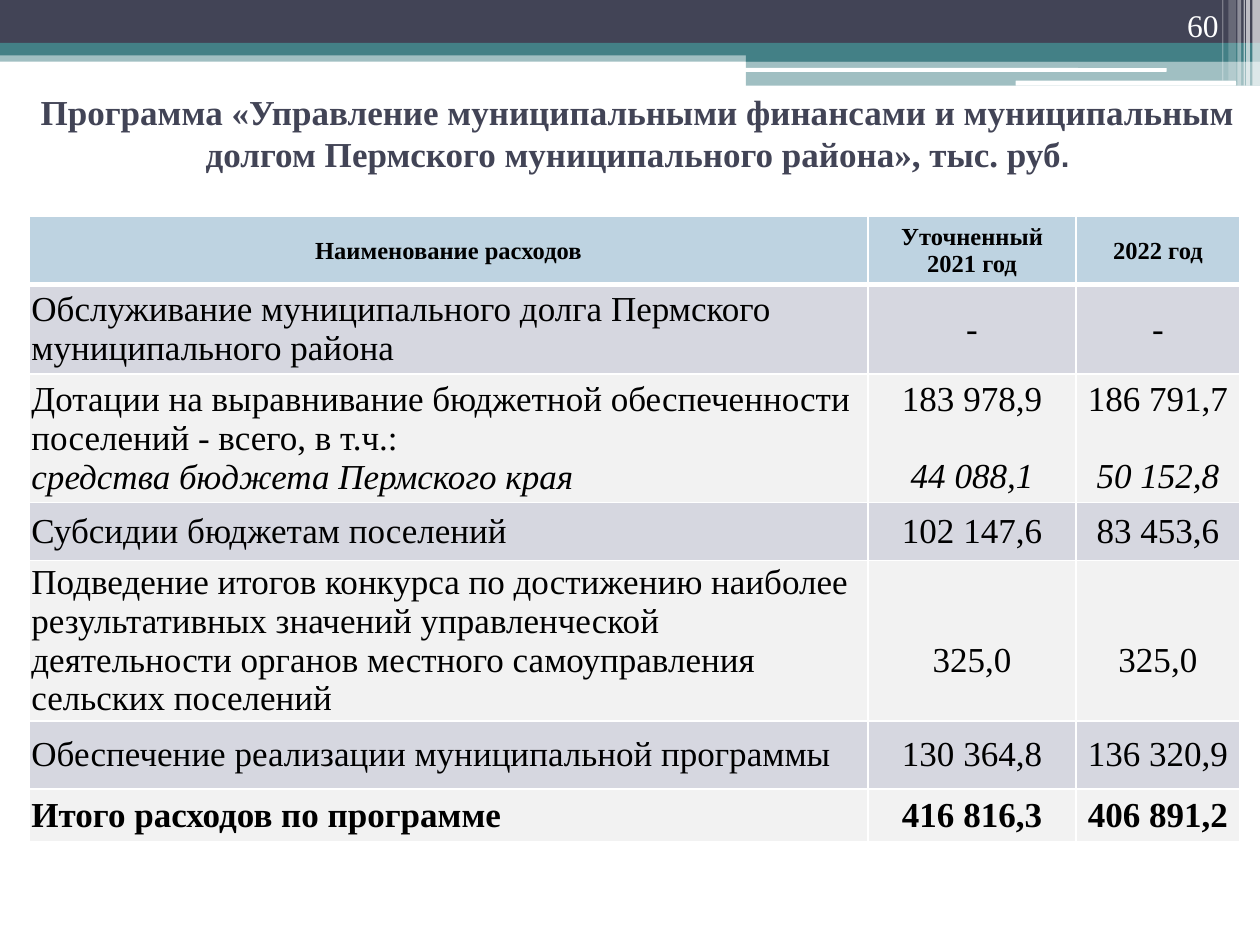
"""Build the municipal finance programme slide with its expenditure table."""
from dataclasses import dataclass

from pptx import Presentation
from pptx.dml.color import RGBColor
from pptx.enum.shapes import MSO_SHAPE
from pptx.enum.text import MSO_ANCHOR, PP_ALIGN
from pptx.oxml.ns import qn
from pptx.oxml.xmlchemy import OxmlElement
from pptx.util import Inches, Pt

RECTANGLE = MSO_SHAPE.RECTANGLE
ROUNDED = MSO_SHAPE.ROUNDED_RECTANGLE
MIDDLE, BOTTOM = MSO_ANCHOR.MIDDLE, MSO_ANCHOR.BOTTOM
LEFT, CENTER, RIGHT = PP_ALIGN.LEFT, PP_ALIGN.CENTER, PP_ALIGN.RIGHT


@dataclass(frozen=True)
class Theme:
    dark: str = "424456"
    teal: str = "438086"
    white: str = "FFFFFF"
    black: str = "000000"
    header: str = "BED3E1"
    bands: tuple[str, str] = ("D6D7E0", "F2F2F2")
    font: str = "Times New Roman"
    accent_font: str = "Cabin"
    body_size: int = 20
    header_size: int = 14
    number_size: int = 18


@dataclass(frozen=True)
class Bar:
    left: float
    top: float
    width: float
    height: float
    color: str
    opacity: int = 100
    shape_type: MSO_SHAPE = RECTANGLE


@dataclass(frozen=True)
class Expense:
    height: float
    name: str
    values: tuple[str, str]
    detail: str = ""
    detail_values: tuple[str, str] = ("", "")
    value_drop: float = 0
    bold: bool = False


THEME = Theme()
BARS = (
    Bar(0, 0.4, 10, 0.09, THEME.teal, 50),
    Bar(0, 0, 10, 0.34, THEME.dark),
    Bar(0, 0.34, 10, 0.1, THEME.teal),
    Bar(5.92, 0.39, 4.08, 0.1, THEME.teal),
    Bar(5.92, 0.48, 4.08, 0.2, THEME.teal, 50),
    Bar(5.91, 0.54, 3.35, 0.03, THEME.white, shape_type=ROUNDED),
    Bar(8.06, 0.64, 1.75, 0.04, THEME.white, shape_type=ROUNDED),
    Bar(9.94, 0, 0.06, 0.68, THEME.white, 65),
    Bar(9.89, 0, 0.03, 0.68, THEME.white, 65),
    Bar(9.87, 0, 0.01, 0.68, THEME.white, 60),
    Bar(9.82, 0, 0.03, 0.68, THEME.white, 40),
    Bar(9.75, 0, 0.06, 0.64, THEME.white, 20),
    Bar(9.7, 0, 0.01, 0.64, THEME.white, 30),
)
COLUMN_WIDTHS = (6.66, 1.65, 1.3)
HEADER_HEIGHT = 0.54
HEADINGS = ("Наименование расходов", "Уточненный 2021 год", "2022 год")
EXPENSES = (
    Expense(0.71, "Обслуживание муниципального долга Пермского муниципального района", ("-", "-")),
    Expense(1.02, "Дотации на выравнивание бюджетной обеспеченности поселений - всего, в т.ч.:",
            ("183 978,9", "186 791,7"), "средства бюджета Пермского края", ("44 088,1", "50 152,8")),
    Expense(0.46, "Субсидии бюджетам поселений", ("102 147,6", "83 453,6")),
    Expense(1.04, "Подведение итогов конкурса по достижению наиболее результативных значений "
            "управленческой деятельности органов местного самоуправления сельских поселений",
            ("325,0", "325,0"), value_drop=0.31),
    Expense(0.54, "Обеспечение реализации муниципальной программы", ("130 364,8", "136 320,9")),
    Expense(0.42, "Итого расходов по программе", ("416 816,3", "406 891,2"), bold=True),
)


def format_paragraph(paragraph, size: int, color: str, alignment, bold=False, italic=False) -> None:
    paragraph.alignment = alignment
    for run in paragraph.runs:
        run.font.name = THEME.font
        run.font.size = Pt(size)
        run.font.bold = bold
        run.font.italic = italic
        run.font.color.rgb = RGBColor.from_string(color)


def draw_bar(slide, bar: Bar) -> None:
    shape = slide.shapes.add_shape(
        bar.shape_type, Inches(bar.left), Inches(bar.top), Inches(bar.width), Inches(bar.height))
    shape.shadow.inherit = False
    shape.fill.solid()
    shape.fill.fore_color.rgb = RGBColor.from_string(bar.color)
    shape.line.fill.background()
    if bar.opacity < 100:
        alpha = OxmlElement("a:alpha")
        alpha.set("val", str(bar.opacity * 1000))
        shape.element.find(".//" + qn("a:srgbClr")).append(alpha)


def draw_title(slide) -> None:
    title = slide.shapes.title
    title.left, title.top = Inches(0), Inches(0.62)
    title.width, title.height = Inches(10.12), Inches(0.86)
    title.text_frame.vertical_anchor = MIDDLE
    title.text_frame.word_wrap = True
    paragraph = title.text_frame.paragraphs[0]
    paragraph.text = ("Программа «Управление муниципальными финансами и муниципальным "
                      "долгом Пермского муниципального района», тыс. руб")
    period = paragraph.add_run()
    period.text = "."
    format_paragraph(paragraph, THEME.body_size, THEME.dark, CENTER, bold=True)
    period.font.name = THEME.accent_font


def style_cell(cell, fill: str, margins: tuple[float, float], bottom_width: int = 1) -> None:
    cell.vertical_anchor = MIDDLE
    cell.margin_left = cell.margin_right = Inches(margins[0])
    cell.margin_top = cell.margin_bottom = Inches(margins[1])
    properties = cell._tc.get_or_add_tcPr()
    for side, width in (("L", 1), ("R", 1), ("T", 1), ("B", bottom_width)):
        line = OxmlElement(f"a:ln{side}")
        line.set("w", str(Pt(width)))
        solid = OxmlElement("a:solidFill")
        color = OxmlElement("a:srgbClr")
        color.set("val", THEME.white)
        solid.append(color)
        line.append(solid)
        properties.append(line)
    cell.fill.solid()
    cell.fill.fore_color.rgb = RGBColor.from_string(fill)


def fill_expense_row(row, expense: Expense, fill: str) -> None:
    texts = (expense.name, *expense.values)
    details = (expense.detail, *expense.detail_values)
    for index, (cell, text, detail) in enumerate(zip(row.cells, texts, details)):
        alignment = CENTER if index else LEFT
        style_cell(cell, fill, (0.02, 0.02))
        cell.text_frame.text = text
        format_paragraph(cell.text_frame.paragraphs[0], THEME.body_size, THEME.black,
                         alignment, bold=expense.bold)
        if index:
            cell.margin_top = Inches(0.02 + expense.value_drop)
        if detail:
            paragraph = cell.text_frame.add_paragraph()
            paragraph.text = detail
            format_paragraph(paragraph, THEME.body_size, THEME.black, alignment, italic=True)
            if index:
                paragraph.space_before = Pt(22)


def draw_table(slide) -> None:
    heights = (HEADER_HEIGHT, *(expense.height for expense in EXPENSES))
    table = slide.shapes.add_table(
        len(heights), len(COLUMN_WIDTHS), Inches(0.23), Inches(1.72),
        Inches(sum(COLUMN_WIDTHS)), Inches(sum(heights))).table
    for column, width in zip(table.columns, COLUMN_WIDTHS):
        column.width = Inches(width)
    for row, height in zip(table.rows, heights):
        row.height = Inches(height)
    for cell, heading in zip(table.rows[0].cells, HEADINGS):
        style_cell(cell, THEME.header, (0.1, 0.05), bottom_width=3)
        cell.text_frame.text = heading
        format_paragraph(cell.text_frame.paragraphs[0], THEME.header_size, THEME.black,
                         CENTER, bold=True)
    for index, expense in enumerate(EXPENSES):
        fill_expense_row(table.rows[index + 1], expense, THEME.bands[index % 2])


def draw_page_number(slide) -> None:
    text_frame = slide.shapes.add_textbox(
        Inches(8.94), Inches(0), Inches(0.83), Inches(0.4)).text_frame
    text_frame.word_wrap = True
    text_frame.vertical_anchor = BOTTOM
    text_frame.text = "60"
    format_paragraph(text_frame.paragraphs[0], THEME.number_size, THEME.white, RIGHT)


def main() -> None:
    presentation = Presentation()
    presentation.slide_width, presentation.slide_height = Inches(10), Inches(7.5)
    slide = presentation.slides.add_slide(presentation.slide_layouts[5])
    for bar in BARS:
        draw_bar(slide, bar)
    draw_title(slide)
    draw_table(slide)
    draw_page_number(slide)
    presentation.save("out.pptx")


if __name__ == "__main__":
    main()
